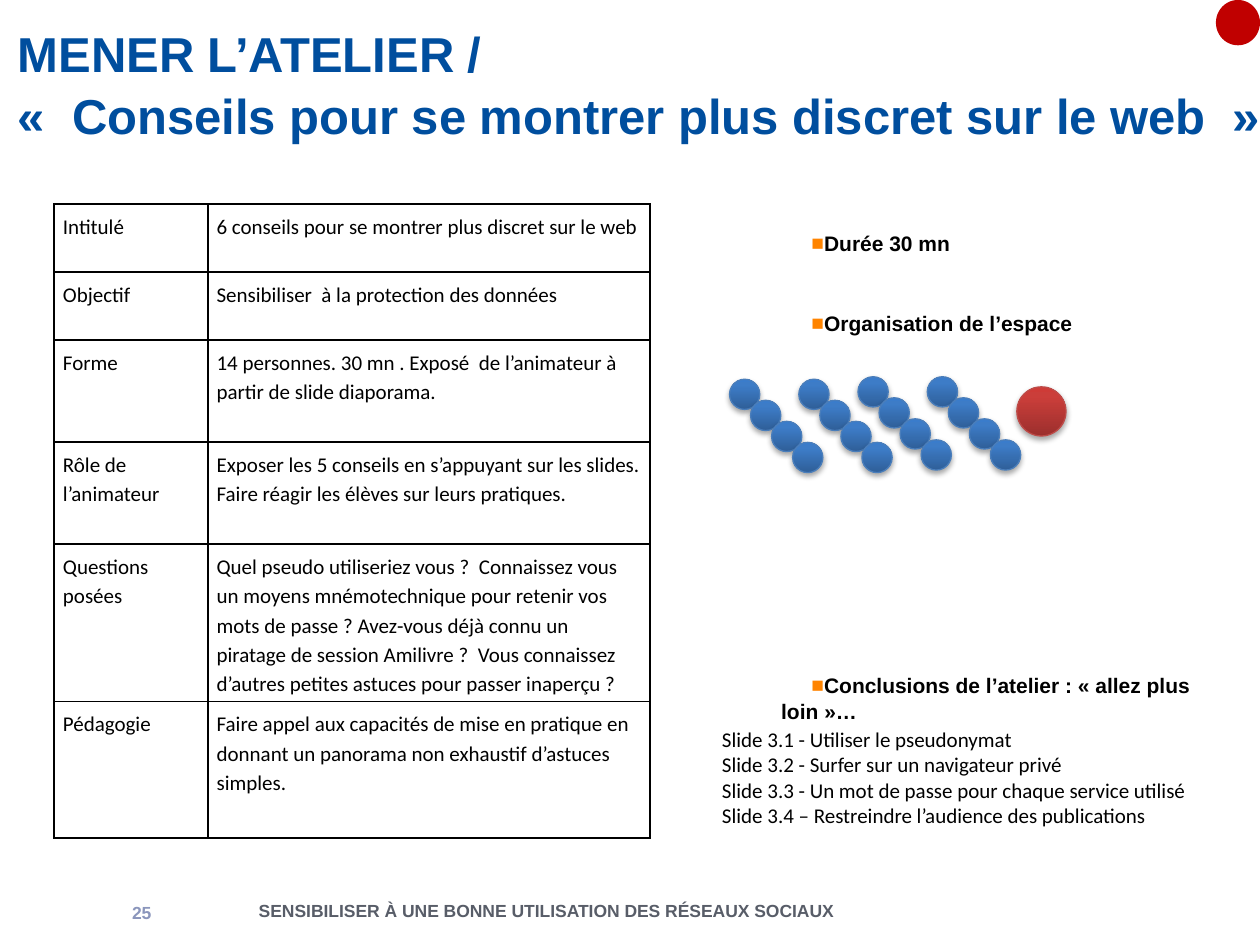
from copy import deepcopy
from lxml import etree
from pptx import Presentation
from pptx import util as u
from pptx.dml.color import RGBColor
from pptx.enum import shapes, text
from pptx.oxml import ns

THEME = {
    "title": "004E9E", "footer": "585D68", "number": "8B96BC", "ink": "000000",
    "bullet": "FF8400", "badge": "C00000",
    "pupil": ("4A7EBB", ["2F5F99", "3D7CC7", "3A7CCB"]),
    "leader": ("BE4B48", ["9C2F2D", "CB3E3A", "CE3B37"]),
    "head_font": "Arial", "text_font": "Calibri",
    "title_size": 28, "text_size": 12, "footer_size": 10,
}
BORDER = ('<a:{side} xmlns:a="{a}" w="12192"><a:solidFill><a:srgbClr val="{ink}"/>'
          '</a:solidFill></a:{side}>')
SHADOW = ('<a:outerShdw xmlns:a="{a}" blurRad="40000" dist="23000" dir="5400000" '
          'rotWithShape="0"><a:srgbClr val="000000"><a:alpha val="35000"/>'
          '</a:srgbClr></a:outerShdw>')
A = ns.nsdecls("a").split('"')[1]

# Slide and its grid of 100 columns by 75 rows
prs = Presentation()
prs.slide_width, prs.slide_height = u.Inches(10), u.Inches(7.5)
COL, ROW = prs.slide_width / 100, prs.slide_height / 75
slide = prs.slides.add_slide(prs.slide_layouts[3])
title, plan, conclusion = slide.placeholders


def place(left, top, width, height):
    return [int(n) for n in (left * COL, top * ROW, width * COL, height * ROW)]


def style(paragraph, font, size, color, bold=False):
    paragraph.font.name, paragraph.font.size = font, u.Pt(size)
    paragraph.font.bold = bold
    paragraph.font.color.rgb = RGBColor.from_string(color)


# Title
title.left, title.top, title.width, title.height = place(0.4, 3.5, 105.5, 6.3)
title.text_frame.text = ("MENER L’ATELIER /\n"
                         "«  Conseils pour se montrer plus discret sur le web  »")
title.text_frame.auto_size = text.MSO_AUTO_SIZE.NONE
title.text_frame.vertical_anchor = text.MSO_ANCHOR.MIDDLE
for line in title.text_frame.paragraphs:
    line.alignment = text.PP_ALIGN.LEFT
    style(line, THEME["head_font"], THEME["title_size"], THEME["title"], True)
title.text_frame.paragraphs[1].space_before = u.Pt(2)

# Footer and page number
for words, box, align, color in [
    ("SENSIBILISER À UNE BONNE UTILISATION DES RÉSEAUX SOCIAUX",
     (14.6, 70.6, 57.5, 3.4), text.PP_ALIGN.CENTER, THEME["footer"]),
    ("25", (4.3, 70.9, 8.7, 3.1), text.PP_ALIGN.RIGHT, THEME["number"]),
]:
    frame = slide.shapes.add_textbox(*place(*box)).text_frame
    frame.word_wrap = True
    frame.vertical_anchor = text.MSO_ANCHOR.MIDDLE
    frame.text = words
    frame.paragraphs[0].alignment = align
    style(frame.paragraphs[0], THEME["head_font"], THEME["footer_size"], color, True)

# Lists on the right: headings carry a square bullet, slide names are plain
for body, box, headings, names in [
    (plan, (56.3, 17.8, 32.3, 9), ["Durée 30 mn", "Organisation de l’espace"], []),
    (conclusion, (56.3, 52.9, 40.2, 14),
     ["Conclusions de l’atelier : « allez plus loin »…"],
     ["Slide 3.1 - Utiliser le pseudonymat",
      "Slide 3.2 - Surfer sur un navigateur privé",
      "Slide 3.3 - Un mot de passe pour chaque service utilisé",
      "Slide 3.4 – Restreindre l’audience des publications"]),
]:
    body.left, body.top, body.width, body.height = place(*box)
    body.text_frame.text = "\n".join(headings + names)
    body.text_frame.auto_size = text.MSO_AUTO_SIZE.NONE
    for i, item in enumerate(body.text_frame.paragraphs):
        heading = i < len(headings)
        props = item._p.get_or_add_pPr()
        if heading:
            item.level = 1
            props.set("marL", str(u.Inches(0.47)))
            props.set("indent", str(u.Inches(0.24)))
            color = etree.SubElement(props, ns.qn("a:buClr"))
            etree.SubElement(color, ns.qn("a:srgbClr"), val=THEME["bullet"])
            etree.SubElement(props, ns.qn("a:buFont"), typeface=THEME["head_font"])
            etree.SubElement(props, ns.qn("a:buChar"), char="■")
        else:
            props.set("marL", "0")
            props.set("indent", "0")
            etree.SubElement(props, ns.qn("a:buNone"))
        item.space_before = u.Pt(29.3 if heading and i else 0)
        item.space_after = u.Pt(2 if heading else 0)
        style(item, THEME["head_font"] if heading else THEME["text_font"],
              THEME["text_size"], THEME["ink"], heading)

# Workshop table
workshop = [
    (5.4, "Intitulé", "6 conseils pour se montrer plus discret sur le web"),
    (5.4, "Objectif", "Sensibiliser  à la protection des données"),
    (8.1, "Forme", "14 personnes. 30 mn . Exposé  de l’animateur à partir de "
                   "slide diaporama."),
    (8.1, "Rôle de l’animateur", "Exposer les 5 conseils en s’appuyant sur les slides. "
                                 "Faire réagir les élèves sur leurs pratiques."),
    (9.3, "Questions posées",
     "Quel pseudo utiliseriez vous ?  Connaissez vous un moyens mnémotechnique pour "
     "retenir vos mots de passe ? Avez-vous déjà connu un piratage de session "
     "Amilivre ?  Vous connaissez d’autres petites astuces pour passer inaperçu ?"),
    (10.8, "Pédagogie", "Faire appel aux capacités de mise en pratique en donnant un "
                        "panorama non exhaustif d’astuces simples."),
]
table = slide.shapes.add_table(len(workshop), 2, *place(4.3, 16.2, 47.3, 47.1)).table
table.first_row = table.horz_banding = False
for column, width in zip(table.columns, (12.2, 35.1)):
    column.width = int(width * COL)
for row, (height, *entries) in zip(table.rows, workshop):
    row.height = int(height * ROW)
    for cell, words in zip(row.cells, entries):
        cell.text = words
        cell.margin_left = cell.margin_right = u.Inches(0.07)
        cell.margin_top = cell.margin_bottom = u.Inches(0.05)
        cell.text_frame.paragraphs[0].line_spacing = 1.15
        style(cell.text_frame.paragraphs[0], THEME["text_font"],
              THEME["text_size"], THEME["ink"])
        for side in ("lnL", "lnR", "lnT", "lnB"):
            cell._tc.get_or_add_tcPr().append(etree.fromstring(
                BORDER.format(side=side, a=A, ink=THEME["ink"])))
        cell.fill.background()

# Room plan: four slanting rows of pupils facing the leader
STEP = 1.67
seats = [(left + STEP * i, top + STEP * i, 2.4, THEME["pupil"])
         for left, top in [(63.4, 30.1), (68.1, 29.9), (73.6, 29.9), (57.9, 30.1)]
         for i in range(4)]
for left, top, size, (edge, shades) in seats + [(80.7, 30.7, 3.9, THEME["leader"])]:
    seat = slide.shapes.add_shape(shapes.MSO_SHAPE.OVAL, *place(left, top, size, size))
    seat.fill.gradient()
    seat.fill.gradient_angle = 90
    stop_list = seat._element.spPr.find(".//" + ns.qn("a:gsLst"))
    stop_list.append(deepcopy(stop_list[-1]))
    for stop, position, shade in zip(seat.fill.gradient_stops, (0, 0.8, 1), shades):
        stop.position = position
        stop.color.rgb = RGBColor.from_string(shade)
    seat.line.color.rgb = RGBColor.from_string(edge)
    seat.line.width = u.Pt(0.75)
    seat.shadow.inherit = False
    effects = seat._element.spPr.find(ns.qn("a:effectLst"))
    effects.append(etree.fromstring(SHADOW.format(a=A)))

# Corner badge
badge = slide.shapes.add_shape(shapes.MSO_SHAPE.OVAL, *place(96.5, 0, 3.5, 3.6))
badge.fill.solid()
badge.fill.fore_color.rgb = RGBColor.from_string(THEME["badge"])
badge.line.fill.background()
badge.shadow.inherit = False

prs.save("out.pptx")
